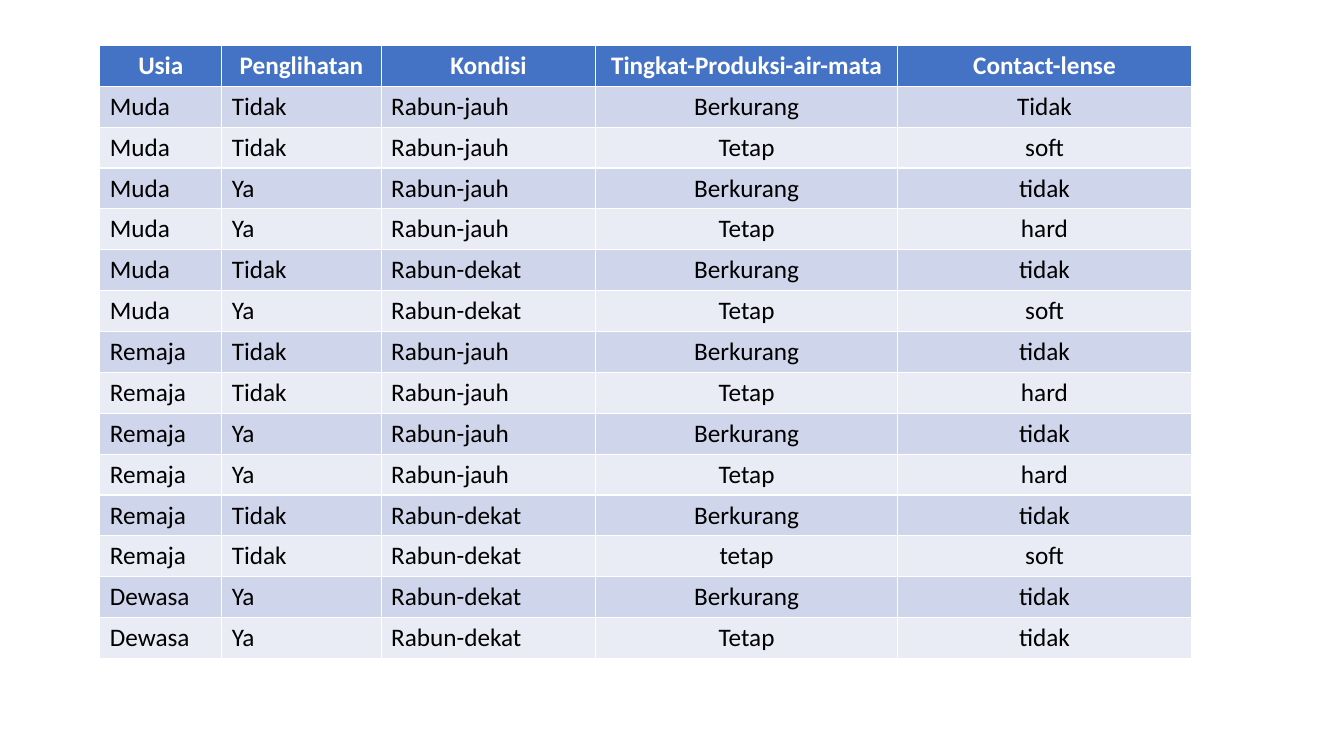
from pptx import Presentation
from pptx.dml.color import RGBColor
from pptx.enum.text import PP_ALIGN
from pptx.util import Inches, Pt

CENTER = PP_ALIGN.CENTER
JUSTIFY = PP_ALIGN.JUSTIFY
BLANK_LAYOUT = 6

TABLE_BOX = (0.99, 0.45, 10.82, 6.08)
COLUMN_WIDTHS = (1.21, 1.58, 2.13, 2.99, 2.92)
COLUMN_ALIGNMENTS = (JUSTIFY, JUSTIFY, JUSTIFY, CENTER, CENTER)
HEADER_FILL = "4472C4"
BAND_FILLS = ("CFD5EA", "E9EBF5")
HEADER_FORMAT = {"name": "Calibri", "size": Pt(18), "bold": True}
BODY_FORMAT = {"name": "Calibri", "size": Pt(18), "bold": False}

HEADERS = ("Usia", "Penglihatan", "Kondisi", "Tingkat-Produksi-air-mata", "Contact-lense")
PATIENTS = (
    ("Muda", "Tidak", "Rabun-jauh", "Berkurang", "Tidak"),
    ("Muda", "Tidak", "Rabun-jauh", "Tetap", "soft"),
    ("Muda", "Ya", "Rabun-jauh", "Berkurang", "tidak"),
    ("Muda", "Ya", "Rabun-jauh", "Tetap", "hard"),
    ("Muda", "Tidak", "Rabun-dekat", "Berkurang", "tidak"),
    ("Muda", "Ya", "Rabun-dekat", "Tetap", "soft"),
    ("Remaja", "Tidak", "Rabun-jauh", "Berkurang", "tidak"),
    ("Remaja", "Tidak", "Rabun-jauh", "Tetap", "hard"),
    ("Remaja", "Ya", "Rabun-jauh", "Berkurang", "tidak"),
    ("Remaja", "Ya", "Rabun-jauh", "Tetap", "hard"),
    ("Remaja", "Tidak", "Rabun-dekat", "Berkurang", "tidak"),
    ("Remaja", "Tidak", "Rabun-dekat", "tetap", "soft"),
    ("Dewasa", "Ya", "Rabun-dekat", "Berkurang", "tidak"),
    ("Dewasa", "Ya", "Rabun-dekat", "Tetap", "tidak"),
)


def set_color(color_format, color):
    """Give a fill or font colour format a solid hex colour."""
    color_format.rgb = RGBColor.from_string(color)


def fill_cell(cell, text, fill, color, alignment, font_format):
    """Write and format one table cell."""
    cell.fill.solid()
    set_color(cell.fill.fore_color, fill)
    para = cell.text_frame.paragraphs[0]
    para.alignment = alignment
    span = para.add_run()
    span.text = text
    for attribute, value in font_format.items():
        setattr(span.font, attribute, value)
    set_color(span.font.color, color)


def add_patient_table(page, box):
    """Place the banded patient table in the given box."""
    row_count = len(PATIENTS) + 1
    frame = page.shapes.add_table(row_count, len(HEADERS), *map(Inches, box))
    table = frame.table
    for column, width in zip(table.columns, COLUMN_WIDTHS):
        column.width = Inches(width)
    for row in table.rows:
        row.height = Inches(box[3] / row_count)
    for column_index, header in enumerate(HEADERS):
        fill_cell(table.cell(0, column_index), header, HEADER_FILL, "FFFFFF",
                  CENTER, HEADER_FORMAT)
    for row_index, patient in enumerate(PATIENTS):
        fill = BAND_FILLS[row_index % 2]
        for column_index, text in enumerate(patient):
            fill_cell(table.cell(row_index + 1, column_index), text, fill, "000000",
                      COLUMN_ALIGNMENTS[column_index], BODY_FORMAT)


def main():
    """Build and save the deck."""
    deck = Presentation()
    deck.slide_width = Inches(13.33)
    deck.slide_height = Inches(7.5)
    page = deck.slides.add_slide(deck.slide_layouts[BLANK_LAYOUT])
    add_patient_table(page, TABLE_BOX)
    deck.save("out.pptx")


if __name__ == "__main__":
    main()
